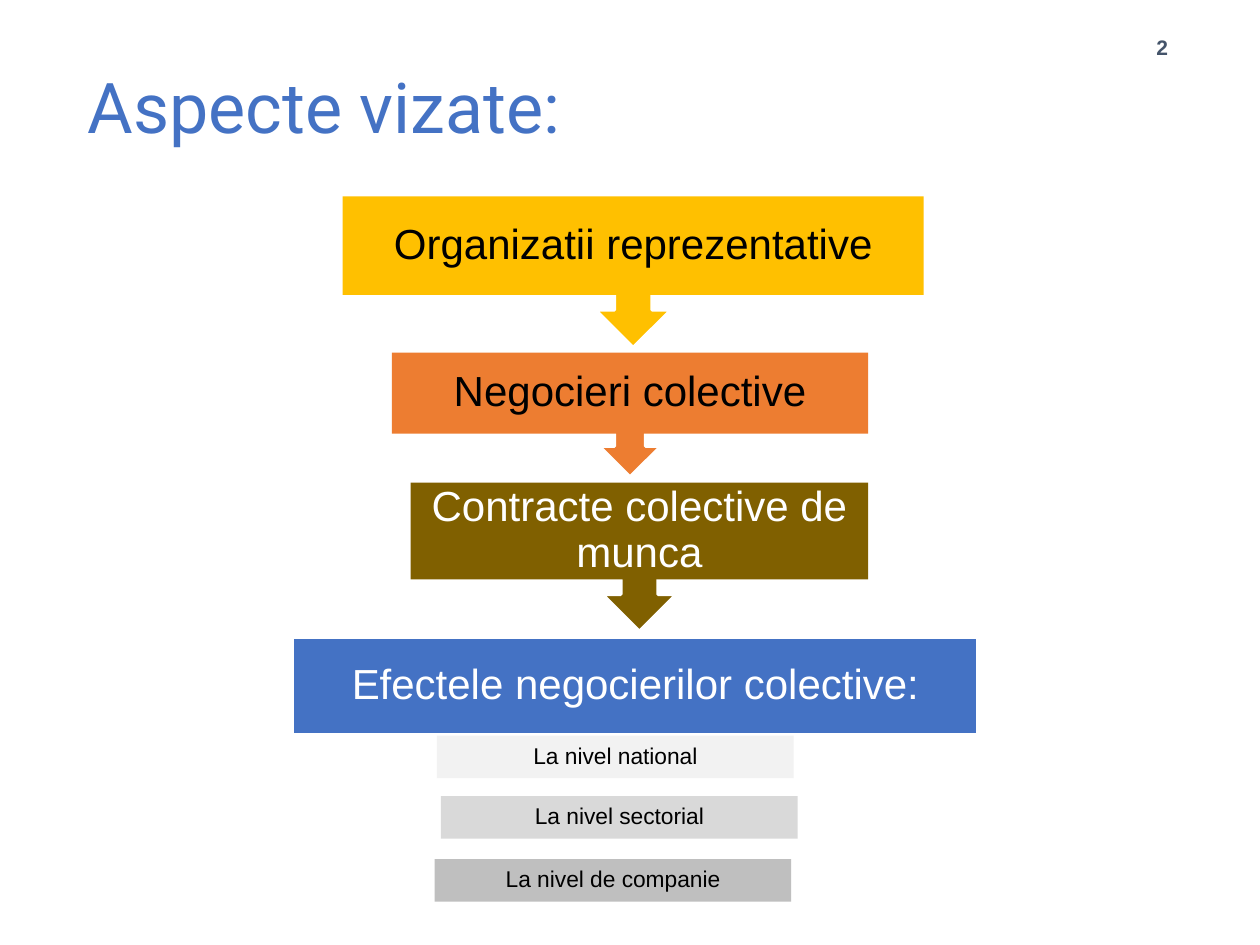
from dataclasses import dataclass

from pptx import Presentation
from pptx import util as u
from pptx.dml.color import RGBColor
from pptx.enum import shapes, text


@dataclass(frozen=True)
class Theme:
    accent: str = "4472C4"
    gold: str = "FFC000"
    orange: str = "ED7D31"
    olive: str = "806000"
    greys: tuple = ("F2F2F2", "D9D9D9", "BFBFBF")
    slate: str = "44546A"
    dark: str = "000000"
    light: str = "FFFFFF"
    title_font: str = "Roboto"
    body_font: str = "Arial"
    title_size: int = 40
    stage_size: int = 24
    level_size: int = 13
    number_size: int = 12


@dataclass(frozen=True)
class Box:
    """Position and size in centimetres."""
    left: float
    top: float
    width: float
    height: float

    def lengths(self) -> tuple:
        return tuple(u.Cm(v) for v in (self.left, self.top, self.width, self.height))


@dataclass(frozen=True)
class Stage:
    label: str
    frame: Box
    label_box: Box
    fill: str
    ink: str
    has_arrow: bool = True


@dataclass(frozen=True)
class Level:
    label: str
    left: float
    top: float
    fill: str


THEME = Theme()
BODY_SHARE = 0.65  # part of an arrow callout above its arrow


def arrow_stage(label: str, frame: Box, fill: str, ink: str) -> Stage:
    body = Box(frame.left, frame.top, frame.width, frame.height * BODY_SHARE)
    return Stage(label, frame, body, fill, ink)


STAGES = [
    arrow_stage("Organizatii reprezentative", Box(6.91, 3.96, 11.71, 3.05), THEME.gold, THEME.dark),
    arrow_stage("Negocieri colective", Box(7.9, 7.11, 9.6, 2.51), THEME.orange, THEME.dark),
    arrow_stage("Contracte colective de munca", Box(8.28, 9.73, 9.22, 3), THEME.olive, THEME.light),
    Stage("Efectele negocierilor colective:", Box(5.89, 12.85, 13.82, 1.96),
          Box(6.17, 13.31, 13.28, 1.04), THEME.accent, THEME.light, has_arrow=False),
]
LEVELS = [
    Level("La nivel national", 8.81, 14.83, THEME.greys[0]),
    Level("La nivel sectorial", 8.89, 16.05, THEME.greys[1]),
    Level("La nivel de companie", 8.76, 17.32, THEME.greys[2]),
]
LEVEL_WIDTH, LEVEL_HEIGHT = 7.19, 0.86


def write(frame, words: str, size: int, color: str, font: str = THEME.body_font,
          align=text.PP_ALIGN.CENTER, anchor=text.MSO_ANCHOR.MIDDLE, bold: bool = False) -> None:
    frame.text = words
    frame.word_wrap = True
    frame.vertical_anchor = anchor
    paragraph = frame.paragraphs[0]
    paragraph.alignment = align
    for run in paragraph.runs:
        run.font.name = font
        run.font.size = u.Pt(size)
        run.font.bold = bold
        run.font.color.rgb = RGBColor.from_string(color)


def draw_shape(slide, kind, box: Box, fill: str, outlined: bool = False):
    shape = slide.shapes.add_shape(kind, *box.lengths())
    shape.shadow.inherit = False
    shape.fill.solid()
    shape.fill.fore_color.rgb = RGBColor.from_string(fill)
    if outlined:
        shape.line.color.rgb = RGBColor.from_string(THEME.light)
        shape.line.width = u.Pt(2)
    else:
        shape.line.fill.background()
    return shape


def draw_label(slide, box: Box, fill: str, words: str, size: int, ink: str, inset: float) -> None:
    frame = draw_shape(slide, shapes.MSO_SHAPE.RECTANGLE, box, fill).text_frame
    frame.margin_left = frame.margin_right = u.Cm(inset)
    frame.margin_top = frame.margin_bottom = u.Cm(inset)
    write(frame, words, size, ink)
    frame.paragraphs[0].line_spacing = 0.9


def draw_stage(slide, stage: Stage) -> None:
    kind = shapes.MSO_SHAPE.UP_ARROW_CALLOUT if stage.has_arrow else shapes.MSO_SHAPE.RECTANGLE
    backing = draw_shape(slide, kind, stage.frame, stage.fill, outlined=True)
    if stage.has_arrow:
        backing.rotation = 180
    draw_label(slide, stage.label_box, stage.fill, stage.label, THEME.stage_size, stage.ink, 0.3)


def draw_level(slide, level: Level) -> None:
    box = Box(level.left, level.top, LEVEL_WIDTH, LEVEL_HEIGHT)
    draw_label(slide, box, level.fill, level.label, THEME.level_size, THEME.dark, 0.25)


def main() -> None:
    deck = Presentation()
    deck.slide_width, deck.slide_height = u.Cm(25.4), u.Cm(19.05)
    slide = deck.slides.add_slide(deck.slide_layouts[5])

    # Title
    title = slide.shapes.title
    title.left, title.top, title.width, title.height = Box(1.27, 1.02, 13.54, 2.21).lengths()
    title.text_frame.margin_left, title.text_frame.margin_right = u.Cm(0.5), 0
    write(title.text_frame, "Aspecte vizate:", THEME.title_size, THEME.accent,
          font=THEME.title_font, align=text.PP_ALIGN.LEFT)

    # Page number
    number = slide.shapes.add_textbox(*Box(22.73, 0.48, 1.4, 0.84).lengths())
    write(number.text_frame, "2", THEME.number_size, THEME.slate,
          anchor=text.MSO_ANCHOR.BOTTOM, bold=True)

    # Flow of stages, then the levels they affect
    for stage in STAGES:
        draw_stage(slide, stage)
    for level in LEVELS:
        draw_level(slide, level)

    deck.save("out.pptx")


if __name__ == "__main__":
    main()
